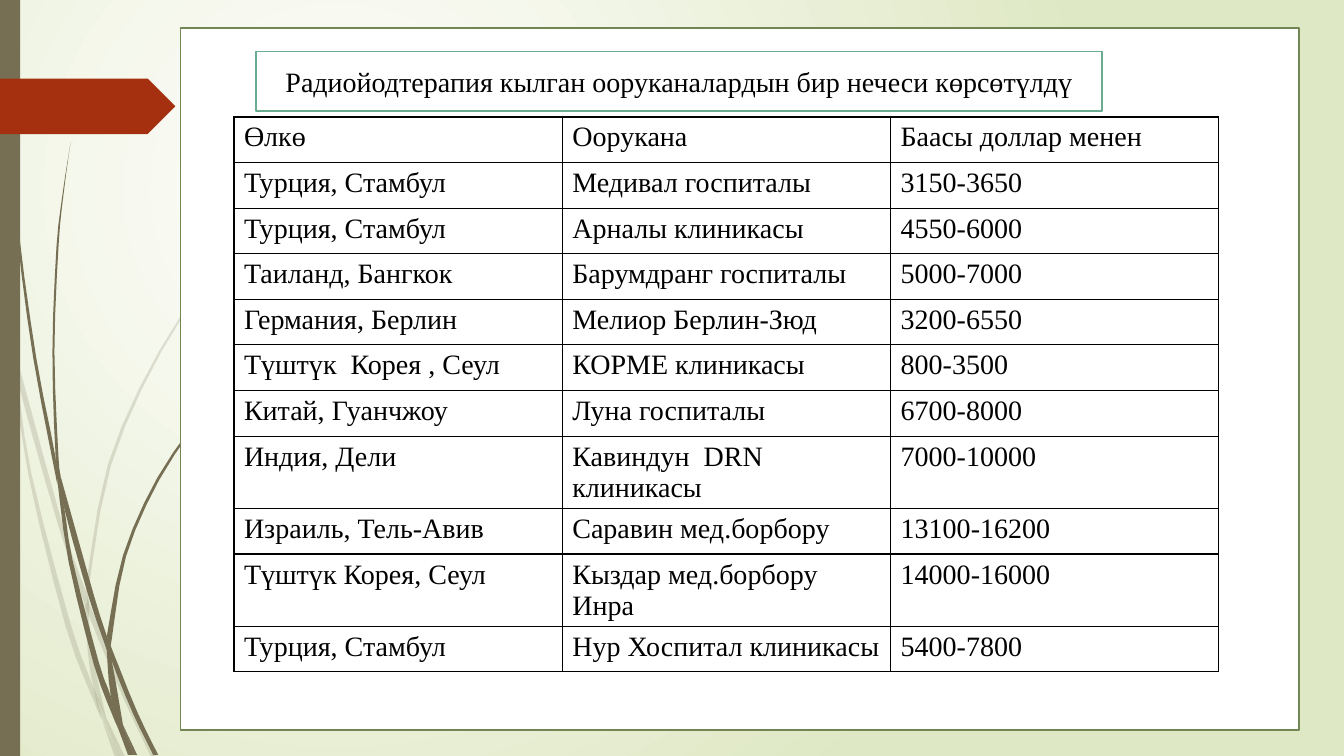
from dataclasses import dataclass

import lxml.etree
import pptx
import pptx.dml.color
import pptx.enum.shapes
import pptx.enum.text
import pptx.oxml.ns
import pptx.util

Inches = pptx.util.Inches
RGBColor = pptx.dml.color.RGBColor
Shapes = pptx.enum.shapes.MSO_SHAPE
qn = pptx.oxml.ns.qn

BLACK = RGBColor(0x00, 0x00, 0x00)
WHITE = RGBColor(0xFF, 0xFF, 0xFF)
PALE_GREEN = RGBColor(0xDF, 0xE8, 0xC4)
OLIVE = RGBColor(0x76, 0x6F, 0x54)
RUST = RGBColor(0xA5, 0x30, 0x10)
GREEN = RGBColor(0x72, 0x86, 0x53)
TEAL = RGBColor(0x6A, 0xAC, 0x91)

TEXT_FORMAT = {"name": "Times New Roman", "size": pptx.util.Pt(20), "bold": False}
SMOOTH_STEPS = 3
UNITS_PER_INCH = 1000
Points = list[tuple[float, float]]


@dataclass
class Blade:
    left: Points
    right: Points


@dataclass
class Panel:
    kind: Shapes
    left: float
    top: float
    width: float
    height: float
    fill: RGBColor
    line: RGBColor | None = None
    text: str = ""


PALE_BLADES = [
    Blade([(0, 2.82), (0.09, 3.22), (0.11, 3.5)], [(0, 2.99), (0.1, 3.44), (0.11, 3.5)]),
    Blade([(0.14, 3.45), (0.17, 3.76), (0.58, 5.22), (0.84, 5.99)],
          [(0.14, 3.45), (0.62, 5.2), (0.85, 5.86)]),
    Blade([(0.88, 5.96), (0.88, 6.1), (1.23, 6.94), (1.5, 7.51)],
          [(0.88, 5.96), (0.92, 6.07), (1.27, 6.92), (1.55, 7.51)]),
    Blade([(1.05, 7.11), (1.19, 7.51)], [(1.05, 7.11), (1.24, 7.51)]),
    Blade([(0.11, 3.5), (0.28, 4.7), (0.65, 6.21), (0.92, 6.93), (1.01, 7.14)],
          [(0.11, 3.5), (0.17, 3.76), (0.31, 4.69), (0.7, 6.19), (0.93, 6.83), (1.01, 7.14)]),
    Blade([(0.84, 5.99), (0.87, 6.46), (0.93, 6.83), (1.05, 7.11)],
          [(0.84, 5.99), (0.88, 6.1), (0.91, 6.46), (1.05, 7.11)]),
    Blade([(3.12, 1.53), (2.68, 1.97), (2.28, 2.44), (1.58, 3.48), (1.07, 4.61), (0.85, 5.84)],
          [(3.12, 1.54), (2.68, 1.98), (2.29, 2.45), (1.6, 3.49), (1.1, 4.62), (0.88, 5.84), (0.88, 5.96)]),
    Blade([(1.01, 7.14), (1.14, 7.51)], [(1.01, 7.14), (1.19, 7.51)]),
    Blade([(0.85, 5.86), (0.84, 5.99), (0.88, 6.1)], [(0.85, 5.86), (0.88, 5.96), (0.88, 6.1)]),
    Blade([(0.93, 6.83), (0.99, 7.07), (1.19, 7.51)], [(0.93, 6.83), (1.05, 7.11), (1.19, 7.51)]),
]
DARK_BLADES = [
    Blade([(0.03, 0), (0.04, 0.48), (0.07, 1.1), (0.17, 2.33), (0.33, 3.55), (0.57, 4.81)],
          [(0.04, 0), (0.05, 0.48), (0.08, 1.09), (0.19, 2.32), (0.36, 3.55), (0.55, 4.53), (0.57, 4.81)]),
    Blade([(0.6, 4.72), (0.64, 5.05), (0.88, 5.92), (1.06, 6.45)],
          [(0.6, 4.72), (0.93, 5.9), (1.06, 6.31)]),
    Blade([(1.1, 6.41), (1.11, 6.56), (1.32, 7.08), (1.52, 7.49)],
          [(1.1, 6.41), (1.13, 6.49), (1.36, 7.06), (1.57, 7.49)]),
    Blade([(0.57, 4.77), (0.68, 5.57), (0.93, 6.59), (1.11, 7.08), (1.17, 7.22)],
          [(0.57, 4.77), (0.64, 5.05), (0.72, 5.56), (0.98, 6.57), (1.1, 6.91), (1.17, 7.22)]),
    Blade([(0.7, 1.41), (0.62, 1.93), (0.56, 2.45), (0.52, 3.49), (0.55, 4.49), (0.6, 4.72)],
          [(0.7, 1.41), (0.63, 1.93), (0.58, 2.45), (0.54, 3.49), (0.58, 4.53), (0.6, 4.72)]),
    Blade([(1.22, 7.19), (1.33, 7.49)], [(1.22, 7.19), (1.36, 7.49)]),
    Blade([(0.55, 4.49), (0.57, 4.77), (0.64, 5.05)], [(0.55, 4.49), (0.6, 4.72), (0.64, 5.05)]),
    Blade([(2.6, 3.44), (2.31, 3.73), (2.04, 4.05), (1.56, 4.74), (1.22, 5.51), (1.06, 6.31)],
          [(2.61, 3.44), (2.31, 3.74), (2.05, 4.06), (1.58, 4.76), (1.25, 5.52), (1.11, 6.33), (1.1, 6.41)]),
    Blade([(1.17, 7.22), (1.27, 7.49)], [(1.17, 7.22), (1.31, 7.49)]),
    Blade([(1.06, 6.45), (1.1, 6.91), (1.22, 7.19)], [(1.06, 6.45), (1.11, 6.56), (1.22, 7.19)]),
    Blade([(1.06, 6.31), (1.06, 6.45), (1.11, 6.56)], [(1.06, 6.31), (1.1, 6.41), (1.11, 6.56)]),
    Blade([(1.1, 6.91), (1.17, 7.22), (1.3, 7.49)], [(1.1, 6.91), (1.22, 7.19), (1.33, 7.49)]),
]

BACK_PANELS = [
    Panel(Shapes.RECTANGLE, 0, 0, 0.2, 7.5, OLIVE),
    Panel(Shapes.PENTAGON, 0, 0.78, 1.74, 0.55, RUST),
    Panel(Shapes.RECTANGLE, 1.79, 0.28, 11.09, 6.96, WHITE, GREEN),
]
TITLE = Panel(Shapes.RECTANGLE, 2.54, 0.51, 8.39, 0.59, WHITE, TEAL,
              "Радиойодтерапия кылган ооруканалардын бир нечеси көрсөтүлдү")

HOSPITALS = [
    ("Өлкө", "Оорукана", "Баасы доллар менен"),
    ("Турция, Стамбул", "Медивал госпиталы", "3150-3650"),
    ("Турция, Стамбул", "Арналы клиникасы", "4550-6000"),
    ("Таиланд, Бангкок", "Барумдранг госпиталы", "5000-7000"),
    ("Германия, Берлин", "Мелиор Берлин-Зюд", "3200-6550"),
    ("Түштүк  Корея , Сеул", "КОРМЕ клиникасы", "800-3500"),
    ("Китай, Гуанчжоу", "Луна госпиталы", "6700-8000"),
    ("Индия, Дели", "Кавиндун  DRN клиникасы", "7000-10000"),
    ("Израиль, Тель-Авив", "Саравин мед.борбору", "13100-16200"),
    ("Түштүк Корея, Сеул", "Кыздар мед.борбору Инра", "14000-16000"),
    ("Турция, Стамбул", "Нур Хоспитал клиникасы", "5400-7800"),
]


def write_text(para, text: str) -> None:
    span = para.add_run()
    span.text = text
    for name, value in TEXT_FORMAT.items():
        setattr(span.font, name, value)
    span.font.color.rgb = BLACK


def paint_background(page) -> None:
    fill = page.background.fill
    fill.gradient()
    for stop, color in zip(fill.gradient_stops, (WHITE, PALE_GREEN)):
        stop.color.rgb = color
    linear = page.element.find(".//" + qn("a:lin"))
    gradient = linear.getparent()
    gradient.remove(linear)
    circle = lxml.etree.SubElement(gradient, qn("a:path"), {"path": "circle"})
    focus = {"l": "50000", "t": "50000", "r": "100000", "b": "100000"}
    lxml.etree.SubElement(circle, qn("a:fillToRect"), focus)


def smooth(points: Points) -> Points:
    padded = [points[0], *points, points[-1]]
    curve = []
    for knots in zip(padded, padded[1:], padded[2:], padded[3:]):
        for t in (step / SMOOTH_STEPS for step in range(SMOOTH_STEPS)):
            curve.append(tuple(
                UNITS_PER_INCH * (b + ((c - a) * t + (2 * a - 5 * b + 4 * c - d) * t**2
                                       + (3 * b - a - 3 * c + d) * t**3) / 2)
                for a, b, c, d in zip(*knots)
            ))
    return curve + [tuple(UNITS_PER_INCH * value for value in points[-1])]


def draw_blade(page, blade: Blade, opacity: int) -> None:
    outline = smooth(blade.left) + smooth(blade.right)[::-1]
    builder = page.shapes.build_freeform(*outline[0], scale=Inches(1) / UNITS_PER_INCH)
    builder.add_line_segments(outline[1:], close=True)
    shape = builder.convert_to_shape()
    shape.shadow.inherit = False
    shape.fill.solid()
    shape.fill.fore_color.rgb = OLIVE
    shape.line.fill.background()
    color = shape.element.spPr.find(".//" + qn("a:srgbClr"))
    lxml.etree.SubElement(color, qn("a:alpha"), {"val": str(opacity * 1000)})


def draw_panel(page, panel: Panel) -> None:
    place = map(Inches, (panel.left, panel.top, panel.width, panel.height))
    box = page.shapes.add_shape(panel.kind, *place)
    box.shadow.inherit = False
    box.fill.solid()
    box.fill.fore_color.rgb = panel.fill
    box.line.fill.background()
    if panel.line is not None:
        box.line.color.rgb = panel.line
        box.line.width = pptx.util.Pt(1.25)
    if panel.text:
        box.text_frame.vertical_anchor = pptx.enum.text.MSO_ANCHOR.MIDDLE
        para = box.text_frame.paragraphs[0]
        para.alignment = pptx.enum.text.PP_ALIGN.CENTER
        write_text(para, panel.text)


def add_borders(cell) -> None:
    properties = cell._tc.get_or_add_tcPr()
    for index, side in enumerate(("lnL", "lnR", "lnT", "lnB")):
        border = lxml.etree.Element(qn("a:" + side), {"w": str(pptx.util.Pt(1))})
        solid = lxml.etree.SubElement(border, qn("a:solidFill"))
        lxml.etree.SubElement(solid, qn("a:srgbClr"), {"val": str(BLACK)})
        properties.insert(index, border)


def draw_hospitals(page) -> None:
    size = (len(HOSPITALS), len(HOSPITALS[0]))
    place = map(Inches, (2.32, 1.16, 9.77, 4.98))
    table = page.shapes.add_table(*size, *place).table
    for row, texts in zip(table.rows, HOSPITALS):
        for cell, text in zip(row.cells, texts):
            cell.fill.background()
            add_borders(cell)
            write_text(cell.text_frame.paragraphs[0], text)


def main() -> None:
    deck = pptx.Presentation()
    deck.slide_width, deck.slide_height = Inches(13.33), Inches(7.5)
    page = deck.slides.add_slide(deck.slide_layouts[6])
    paint_background(page)
    for blades, opacity in ((PALE_BLADES, 20), (DARK_BLADES, 100)):
        for blade in blades:
            draw_blade(page, blade, opacity)
    for panel in BACK_PANELS:
        draw_panel(page, panel)
    draw_hospitals(page)
    draw_panel(page, TITLE)
    deck.save("out.pptx")


if __name__ == "__main__":
    main()
